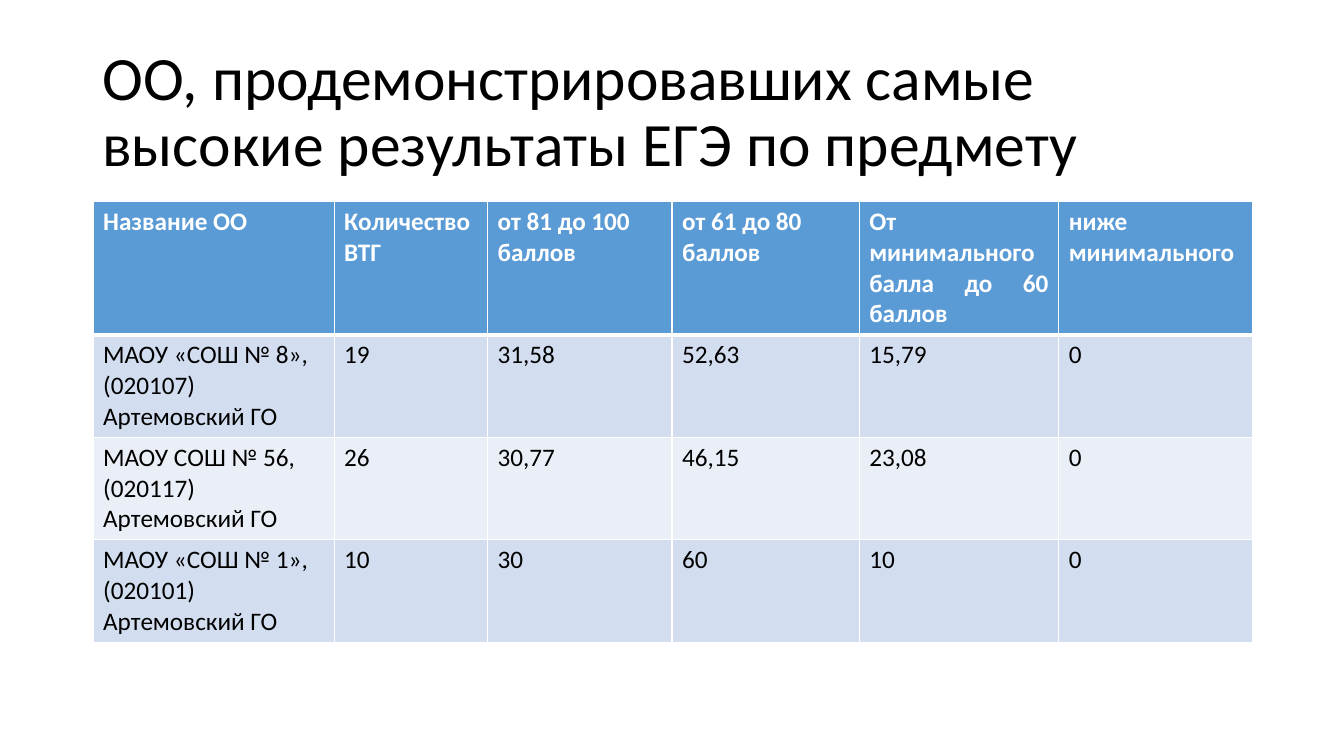
"""Builds a slide with a table of the schools with the best exam results."""
from lxml import etree
from pptx import Presentation
from pptx.dml.color import RGBColor
from pptx.enum.text import MSO_ANCHOR, PP_ALIGN
from pptx.oxml.ns import qn
from pptx.util import Pt

MIDDLE = MSO_ANCHOR.MIDDLE
LEFT, JUSTIFY = PP_ALIGN.LEFT, PP_ALIGN.JUSTIFY
FONT = "Calibri"
WHITE, BLACK, HEADER_BLUE = "FFFFFF", "000000", "5B9BD5"
BAND_FILLS = ["EAEFF7", "D2DEEF"]
COLUMN_WIDTHS = [172.2, 109.6, 131.8, 133.7, 142.5, 138.2]
ROW_HEIGHTS = [94.4, 73.2, 73.2, 73.2]
RESULTS = [
    ["Название ОО", "Количество ВТГ", "от 81 до 100 баллов", "от 61 до 80 баллов",
     "От минимального балла до 60 баллов", "ниже минимального"],
    ["МАОУ «СОШ № 8», (020107) Артемовский ГО", "19", "31,58", "52,63", "15,79", "0"],
    ["МАОУ СОШ № 56, (020117) Артемовский ГО", "26", "30,77", "46,15", "23,08", "0"],
    ["МАОУ «СОШ № 1», (020101) Артемовский ГО", "10", "30", "60", "10", "0"],
]


def add_run(paragraph, text, size, color, bold=False):
    run = paragraph.add_run()
    run.text = text
    run.font.name = FONT
    run.font.size = Pt(size)
    run.font.bold = bold
    run.font.color.rgb = RGBColor.from_string(color)


def add_border(cell, side, width):
    line = etree.SubElement(cell._tc.get_or_add_tcPr(), qn(f"a:ln{side}"), w=str(Pt(width)))
    fill = etree.SubElement(line, qn("a:solidFill"))
    etree.SubElement(fill, qn("a:srgbClr"), val=WHITE)


presentation = Presentation()
presentation.slide_width, presentation.slide_height = Pt(960), Pt(540)
slide = presentation.slides.add_slide(presentation.slide_layouts[5])

title = slide.shapes.title
title.left, title.top, title.width, title.height = Pt(66), Pt(28.8), Pt(828), Pt(104.4)
title.text_frame.vertical_anchor = MIDDLE
title.text_frame.word_wrap = True
heading = title.text_frame.paragraphs[0]
heading.alignment = LEFT
heading.line_spacing = 0.9
add_run(heading, "ОО, продемонстрировавших самые высокие результаты ЕГЭ по предмету", 44, BLACK)

results_table = slide.shapes.add_table(
    len(RESULTS), len(COLUMN_WIDTHS), Pt(66.5), Pt(144), Pt(828), Pt(sum(ROW_HEIGHTS))).table
for column, width in zip(results_table.columns, COLUMN_WIDTHS):
    column.width = Pt(width)

for row_index, (values, height) in enumerate(zip(RESULTS, ROW_HEIGHTS)):
    results_table.rows[row_index].height = Pt(height)
    is_header = row_index == 0
    for column_index, value in enumerate(values):
        cell = results_table.cell(row_index, column_index)
        for side in "LRTB":
            under_header = (row_index, side) in [(0, "B"), (1, "T")]
            add_border(cell, side, 3 if under_header else 1)
        cell.fill.solid()
        cell_color = HEADER_BLUE if is_header else BAND_FILLS[row_index % 2]
        cell.fill.fore_color.rgb = RGBColor.from_string(cell_color)
        paragraph = cell.text_frame.paragraphs[0]
        paragraph.alignment = JUSTIFY if is_header and column_index >= 4 else LEFT
        add_run(paragraph, value, 18, WHITE if is_header else BLACK, is_header)

presentation.save("out.pptx")
